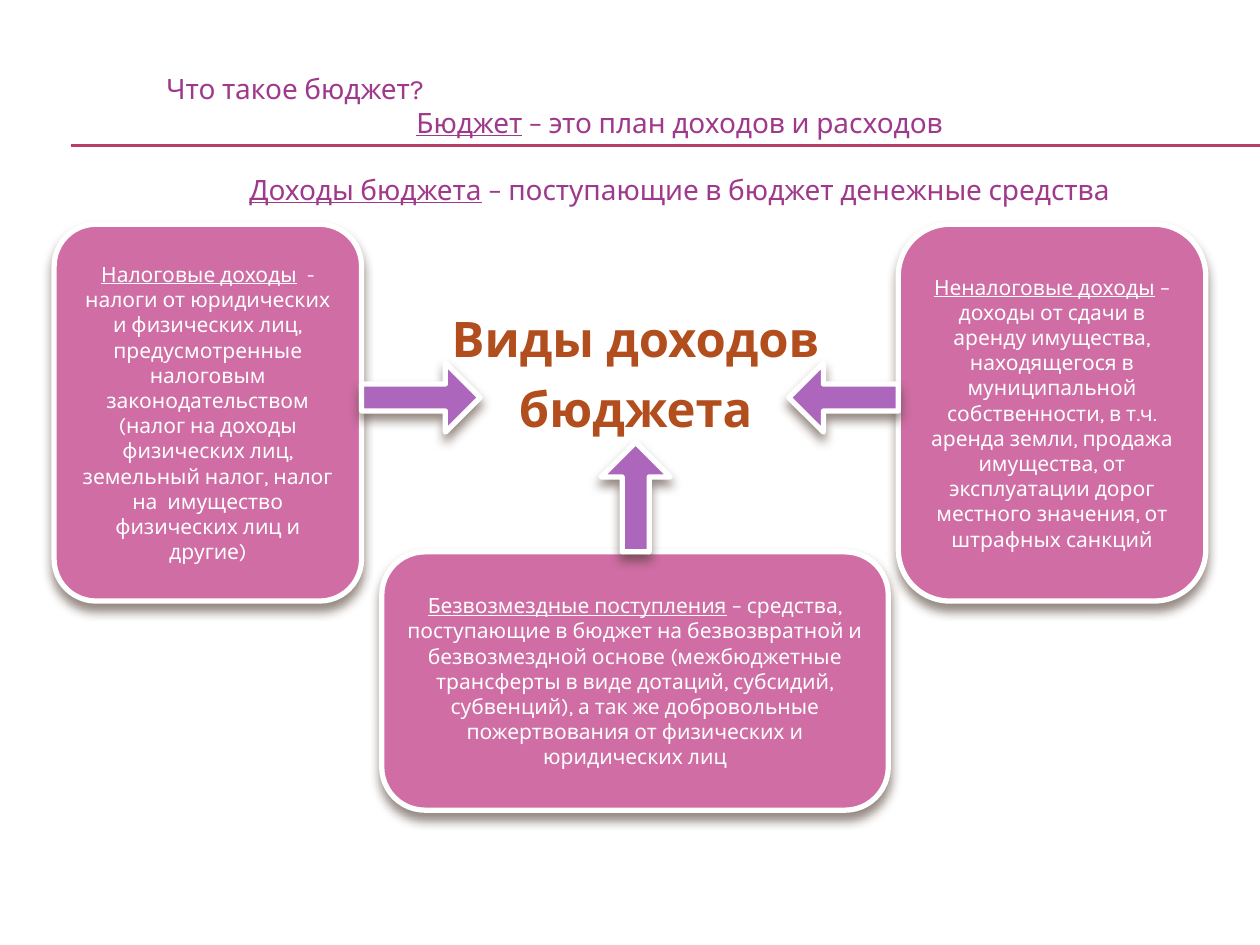
"""Build a slide that explains the budget and its three kinds of income."""
import pptx
import pptx.dml.color
import pptx.enum.shapes
import pptx.enum.text
import pptx.oxml
import pptx.oxml.ns
import pptx.util

Inches, Pt = pptx.util.Inches, pptx.util.Pt
RGB = pptx.dml.color.RGBColor.from_string
MSO = pptx.enum.shapes.MSO_SHAPE
LEFT, CENTER = pptx.enum.text.PP_ALIGN.LEFT, pptx.enum.text.PP_ALIGN.CENTER
THEME = {
    "font": "Karla",
    "rule": "B83D68", "heading": "B24D1D", "title": "9F398B",
    "card": "CF6DA4", "arrow": "AC66BB", "white": "FFFFFF", "shadow": "4E3B30",
    "heading_size": 28, "title_size": 16, "card_size": 12,
}
EFFECTS = '<a:effectLst xmlns:a="http://schemas.openxmlformats.org/drawingml/2006/main">%s</a:effectLst>'
SHADOW = (
    f'<a:outerShdw blurRad="{Pt(6)}" dist="{Pt(4)}" dir="5400000" rotWithShape="0">'
    f'<a:srgbClr val="{THEME["shadow"]}"><a:alpha val="60000"/></a:srgbClr></a:outerShdw>'
)


def add_text(p, runs, color, size, align=CENTER, before=0, bold=False):
    p.alignment, p.space_before = align, Pt(before)
    for text, underline in runs:
        r = p.add_run()
        r.text = text
        r.font.color.rgb = RGB(THEME[color])
        values = {"name": THEME["font"], "size": Pt(THEME[size]), "bold": bold, "underline": underline}
        for name, value in values.items():
            setattr(r.font, name, value)


def add_block(shapes, kind, box, fill, adjustment):
    sp = shapes.add_shape(kind, *map(Inches, box))
    sp.adjustments[0] = adjustment
    sp.fill.solid()
    sp.fill.fore_color.rgb = RGB(THEME[fill])
    sp.line.color.rgb = RGB(THEME["white"])
    sp.line.width = Pt(3)
    sp.shadow.inherit = False
    effects = sp._element.spPr.find(pptx.oxml.ns.qn("a:effectLst"))
    effects.getparent().replace(effects, pptx.oxml.parse_xml(EFFECTS % SHADOW))
    return sp


prs = pptx.Presentation()
prs.slide_width, prs.slide_height = Inches(10), Inches(7.5)
s = prs.slides.add_slide(prs.slide_layouts[6])

for y in (1.15, 1.16):
    rule = s.shapes.add_connector(
        pptx.enum.shapes.MSO_CONNECTOR.STRAIGHT, Inches(0.56), Inches(y), Inches(10), Inches(y))
    rule.line.color.rgb = RGB(THEME["rule"])
    rule.line.width = Pt(0.75)
    rule._element.spPr.append(pptx.oxml.parse_xml(EFFECTS % ""))

texts = [
    ((0.28, 1.78, 9.53, 2.2), 0.67, "heading", True, [
        ([("Виды доходов", False)], CENTER, 0),
        ([("бюджета", False)], CENTER, 6.5),
    ]),
    ((1.22, 0.52, 8.35, 1.18), 0.05, "title", False, [
        ([("Что такое бюджет?", False)], LEFT, 0),
        ([("Бюджет", True), (" – это план доходов и расходов", False)], CENTER, 0),
        ([("Доходы бюджета", True), (" – поступающие в бюджет денежные средства", False)], CENTER, 19.2),
    ]),
]
for box, top, style, bold, lines in texts:
    tf = s.shapes.add_textbox(*map(Inches, box)).text_frame
    tf.word_wrap = True
    tf.margin_top = Inches(top)
    for i, (runs, align, before) in enumerate(lines):
        p = tf.add_paragraph() if i else tf.paragraphs[0]
        add_text(p, runs, style, f"{style}_size", align, before, bold)

cards = [
    ((7.13, 1.78, 2.44, 2.99), 0.167, "Неналоговые доходы",
     " – доходы от сдачи в аренду имущества, находящегося в муниципальной собственности, "
     "в т.ч. аренда земли, продажа имущества, от эксплуатации дорог местного значения, "
     "от штрафных санкций"),
    ((0.43, 1.78, 2.44, 2.99), 0.136, "Налоговые доходы",
     "  - налоги от юридических и физических лиц, предусмотренные налоговым законодательством "
     "(налог на доходы физических лиц, земельный налог, налог на  имущество физических лиц и другие)"),
    ((3.03, 4.38, 4.02, 2.05), 0.167, "Безвозмездные поступления",
     " – средства, поступающие в бюджет на безвозвратной и безвозмездной основе "
     "(межбюджетные трансферты в виде дотаций, субсидий, субвенций), а так же добровольные "
     "пожертвования от физических и юридических лиц"),
]
for box, radius, term, meaning in cards:
    tf = add_block(s.shapes, MSO.ROUNDED_RECTANGLE, box, "card", radius).text_frame
    tf.word_wrap = True
    tf.vertical_anchor = pptx.enum.text.MSO_ANCHOR.MIDDLE
    add_text(tf.paragraphs[0], [(term, True), (meaning, False)], "white", "card_size")

for left, top, width, angle in [(6.26, 2.88, 0.87, 180), (2.87, 2.88, 0.94, 0), (4.61, 3.67, 0.87, 270)]:
    arrow = add_block(s.shapes, MSO.RIGHT_ARROW, (left, top, width, 0.55), "arrow", 0.39)
    arrow.rotation = angle

prs.save("out.pptx")
